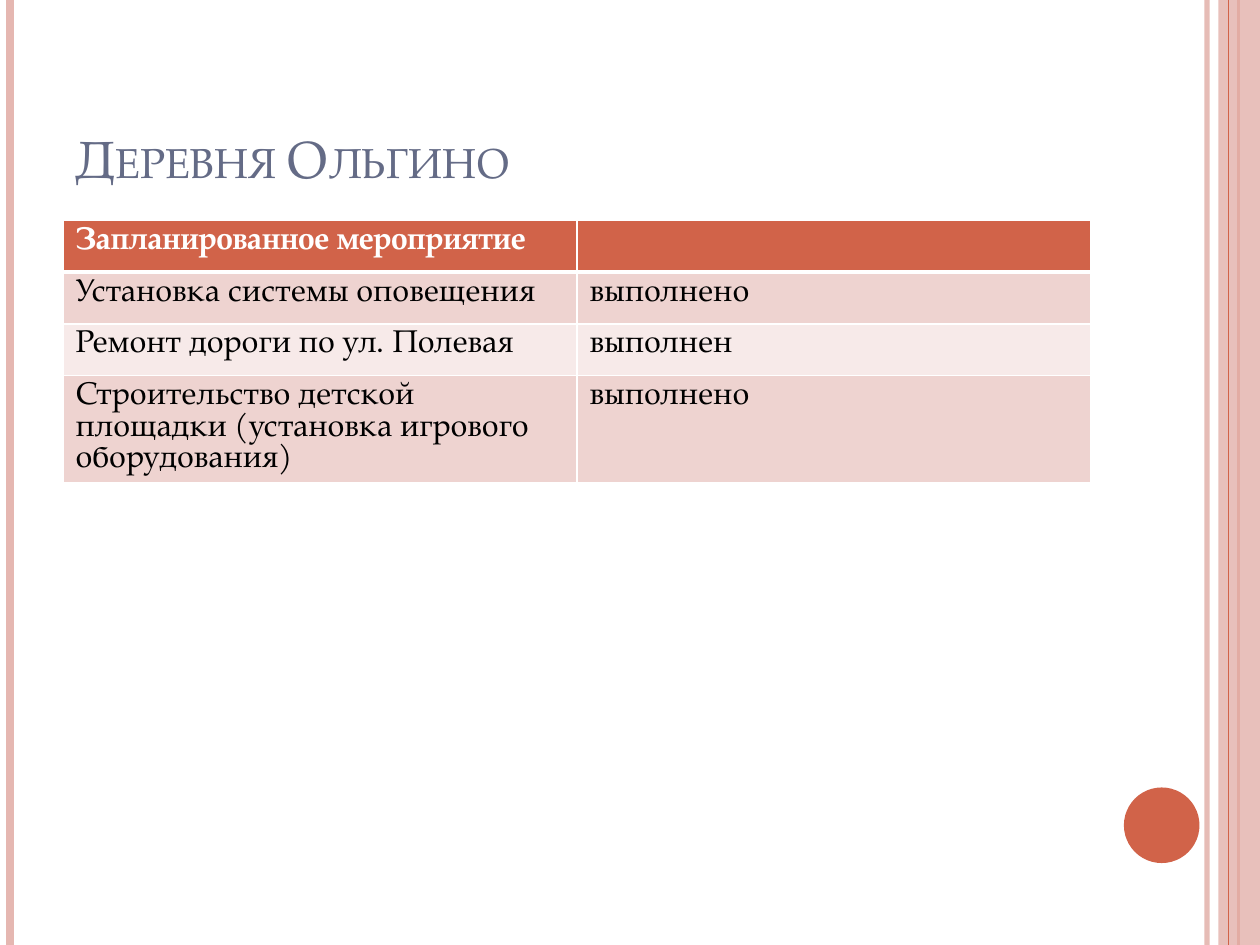
from pptx import Presentation
from pptx.dml.color import RGBColor
from pptx.enum.shapes import MSO_CONNECTOR, MSO_SHAPE as SHAPE
from pptx.enum.text import MSO_ANCHOR, MSO_AUTO_SIZE, PP_ALIGN
from pptx.oxml import parse_xml
from pptx.oxml.ns import nsdecls, qn
from pptx.util import Inches, Pt

FONT = "TeX Gyre Pagella"
ACCENT, PINK, WHITE = "D16349", "E5B7B1", "FFFFFF"
BANDS = ("EED3D0", "F7EAE9")
ROWS = [
    ("Запланированное мероприятие", ""),
    ("Установка системы оповещения", "выполнено"),
    ("Ремонт дороги по ул. Полевая", "выполнен"),
    ("Строительство детской площадки (установка игрового оборудования)", "выполнено"),
]


def rgb(color):
    return RGBColor.from_string(color)


def set_alpha(fill, percent):
    clr = fill._xPr.find(qn("a:solidFill"))[0]
    clr.append(parse_xml(f'<a:alpha {nsdecls("a")} val="{percent * 1000}"/>'))


def set_font(p, size, color, bold=False):
    f = p.font
    f.name, f.size, f.bold = FONT, Pt(size), bold
    f.color.rgb = rgb(color)


def add_stripe(slide, x, color, width, alpha=100):
    line = slide.shapes.add_connector(
        MSO_CONNECTOR.STRAIGHT, Inches(x), 0, Inches(x), Inches(7.5))
    line.line.color.rgb = rgb(color)
    line.line.width = Pt(width)
    if alpha < 100:
        set_alpha(line.line.fill, alpha)
    line._element.spPr.append(parse_xml(f'<a:effectLst {nsdecls("a")}/>'))


def add_block(slide, kind, x, y, w, h, color, alpha=100):
    sp = slide.shapes.add_shape(kind, Inches(x), Inches(y), Inches(w), Inches(h))
    sp.shadow.inherit = False
    sp.fill.solid()
    sp.fill.fore_color.rgb = rgb(color)
    sp.line.fill.background()
    if alpha < 100:
        set_alpha(sp.fill, alpha)


def set_title(slide, text):
    title = slide.shapes.title
    title.left, title.top = Inches(0.5), Inches(0.3)
    title.width, title.height = Inches(8.17), Inches(1.25)
    tf = title.text_frame
    tf.text = text
    tf.word_wrap = True
    tf.auto_size = MSO_AUTO_SIZE.NONE
    tf.vertical_anchor = MSO_ANCHOR.BOTTOM
    p = tf.paragraphs[0]
    p.alignment = PP_ALIGN.LEFT
    set_font(p, 30, "646B86")
    p.font._element.set("cap", "small")


def set_borders(cell, top, bottom):
    tcPr = cell._tc.get_or_add_tcPr()
    sides = (("L", 1), ("R", 1), ("T", top), ("B", bottom))
    for i, (side, width) in enumerate(sides):
        tcPr.insert(i, parse_xml(
            f'<a:ln{side} {nsdecls("a")} w="{Pt(width)}"><a:solidFill>'
            f'<a:srgbClr val="{WHITE}"/></a:solidFill></a:ln{side}>'))


def add_plan_table(slide, rows):
    heights = [0.41, 0.41, 0.41, 0.85]
    table = slide.shapes.add_table(
        len(rows), 2, Inches(0.5), Inches(1.75),
        Inches(8.16), Inches(sum(heights))).table
    for r, (height, texts) in enumerate(zip(heights, rows)):
        header = r == 0
        table.rows[r].height = Inches(height)
        for c, text in enumerate(texts):
            cell = table.cell(r, c)
            cell.text = text
            set_font(cell.text_frame.paragraphs[0], 18,
                     WHITE if header else "000000", header)
            cell.fill.solid()
            cell.fill.fore_color.rgb = rgb(ACCENT if header else BANDS[(r - 1) % 2])
            # The rule under the header is thicker
            set_borders(cell, 3 if r == 1 else 1, 3 if header else 1)


def main():
    prs = Presentation()
    prs.slide_width, prs.slide_height = Inches(10), Inches(7.5)
    slide = prs.slides.add_slide(prs.slide_layouts[5])

    # Side stripes and circle
    add_stripe(slide, 9.58, PINK, 3, 93)
    add_stripe(slide, 0.08, PINK, 4.5)
    add_stripe(slide, 9.83, ACCENT, 1.5)
    add_block(slide, SHAPE.RECTANGLE, 9.67, 0, 0.33, 7.5, PINK, 87)
    add_stripe(slide, 9.75, ACCENT, 0.75)
    add_block(slide, SHAPE.OVAL, 8.92, 6.25, 0.6, 0.6, ACCENT)

    # Content
    set_title(slide, "Деревня Ольгино")
    add_plan_table(slide, ROWS)
    prs.save("out.pptx")


if __name__ == "__main__":
    main()
